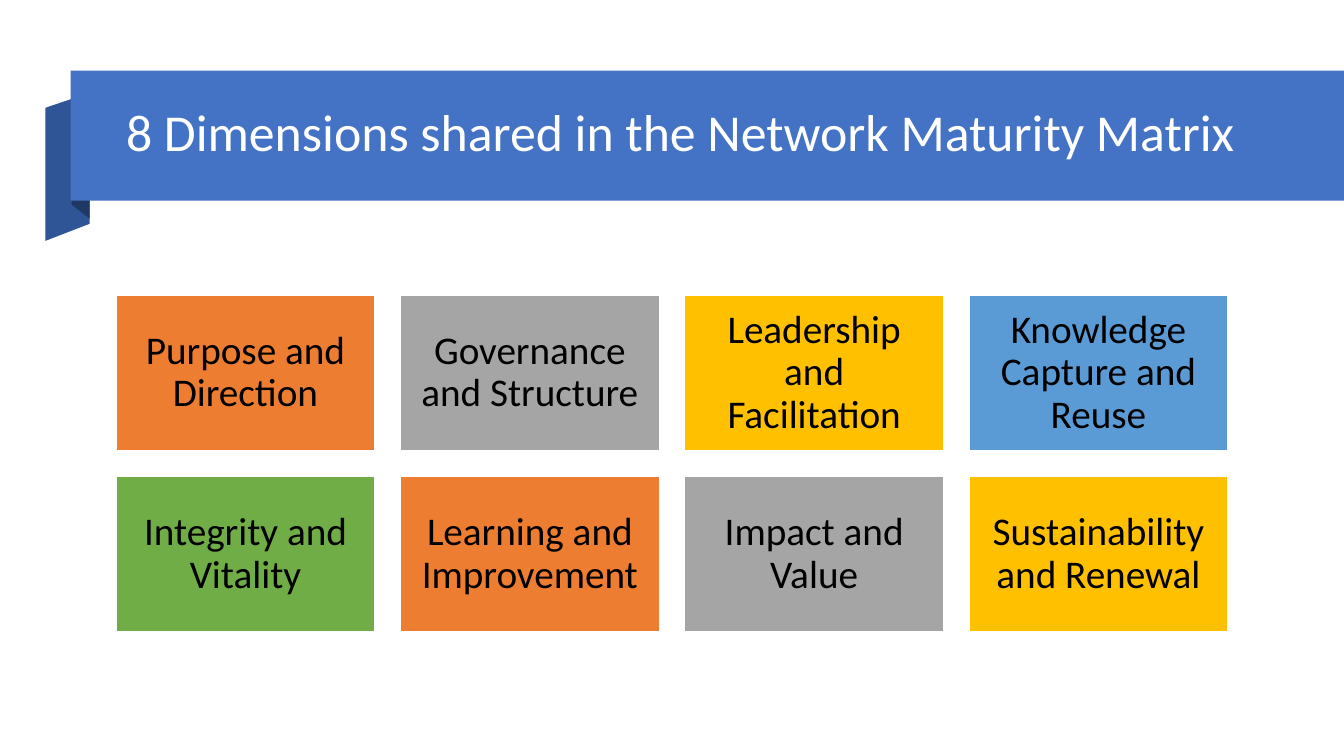
"""Build the slide showing the eight dimensions of the Network Maturity Matrix."""
from dataclasses import dataclass

from pptx import Presentation
from pptx.dml.color import RGBColor
from pptx.enum.shapes import MSO_SHAPE
from pptx.enum.text import MSO_ANCHOR, MSO_AUTO_SIZE, PP_ALIGN
from pptx.util import Inches, Pt


@dataclass(frozen=True)
class Theme:
    font: str = "Calibri"
    title_size: int = 37
    tile_size: int = 28
    white: str = "FFFFFF"
    black: str = "000000"
    banner: str = "4472C4"
    ribbon: str = "2F5597"
    fold: str = "203864"
    orange: str = "ED7D31"
    gray: str = "A5A5A5"
    gold: str = "FFC000"
    blue: str = "5B9BD5"
    green: str = "70AD47"


THEME = Theme()
TITLE = "8 Dimensions shared in the Network Maturity Matrix"
DIMENSIONS = [
    ("Purpose and Direction", THEME.orange),
    ("Governance and Structure", THEME.gray),
    ("Leadership and Facilitation", THEME.gold),
    ("Knowledge Capture and Reuse", THEME.blue),
    ("Integrity and Vitality", THEME.green),
    ("Learning and Improvement", THEME.orange),
    ("Impact and Value", THEME.gray),
    ("Sustainability and Renewal", THEME.gold),
]
RIBBON_PARTS = [
    ([(0.89, 2.22), (0.45, 2.39), (0.45, 1.07), (0.89, 0.92)], THEME.ribbon),
    ([(0.89, 2.17), (0.71, 2.03), (0.71, 0.7), (0.89, 0.85)], THEME.fold),
]
COLUMNS = 4
GRID_LEFT, GRID_TOP = 1.15, 2.93
TILE_WIDTH, TILE_HEIGHT = 2.57, 1.54
COLUMN_STEP, ROW_STEP = 2.82, 1.8
TILE_MARGIN = Inches(0.12)


def paint(shape, color):
    shape.shadow.inherit = False
    shape.fill.solid()
    shape.fill.fore_color.rgb = RGBColor.from_string(color)
    shape.line.fill.background()


def add_rectangle(page, left, top, width, height, color):
    box = page.shapes.add_shape(
        MSO_SHAPE.RECTANGLE, Inches(left), Inches(top), Inches(width), Inches(height)
    )
    paint(box, color)
    return box


def write(shape, text, size, color, alignment):
    frame = shape.text_frame
    frame.text = text
    frame.word_wrap = True
    frame.auto_size = MSO_AUTO_SIZE.NONE
    frame.vertical_anchor = MSO_ANCHOR.MIDDLE
    para = frame.paragraphs[0]
    para.alignment = alignment
    para.line_spacing = 0.9
    para.font.name = THEME.font
    para.font.size = Pt(size)
    para.font.color.rgb = RGBColor.from_string(color)


def add_banner(page):
    for points, color in RIBBON_PARTS:
        corners = [(Inches(x), Inches(y)) for x, y in points]
        builder = page.shapes.build_freeform(*corners[0])
        builder.add_line_segments(corners[1:], close=True)
        paint(builder.convert_to_shape(), color)
    add_rectangle(page, 0.7, 0.7, 12.63, 1.29, THEME.banner)

    title = page.shapes.title
    title.left, title.top = Inches(1.15), Inches(0.86)
    title.width, title.height = Inches(11.27), Inches(0.96)
    write(title, TITLE, THEME.title_size, THEME.white, PP_ALIGN.LEFT)
    title.element.getparent().append(title.element)


def add_dimensions(page):
    for index, (name, color) in enumerate(DIMENSIONS):
        row, column = divmod(index, COLUMNS)
        left = GRID_LEFT + column * COLUMN_STEP
        top = GRID_TOP + row * ROW_STEP
        tile = add_rectangle(page, left, top, TILE_WIDTH, TILE_HEIGHT, color)
        tile.line.color.rgb = RGBColor.from_string(THEME.white)
        tile.line.width = Pt(1)
        write(tile, name, THEME.tile_size, THEME.black, PP_ALIGN.CENTER)
        frame = tile.text_frame
        frame.margin_left = frame.margin_right = TILE_MARGIN
        frame.margin_top = frame.margin_bottom = TILE_MARGIN


def main():
    deck = Presentation()
    deck.slide_width, deck.slide_height = Inches(13.33), Inches(7.5)
    page = deck.slides.add_slide(deck.slide_layouts.get_by_name("Title Only"))
    add_banner(page)
    add_dimensions(page)
    deck.save("out.pptx")


if __name__ == "__main__":
    main()
